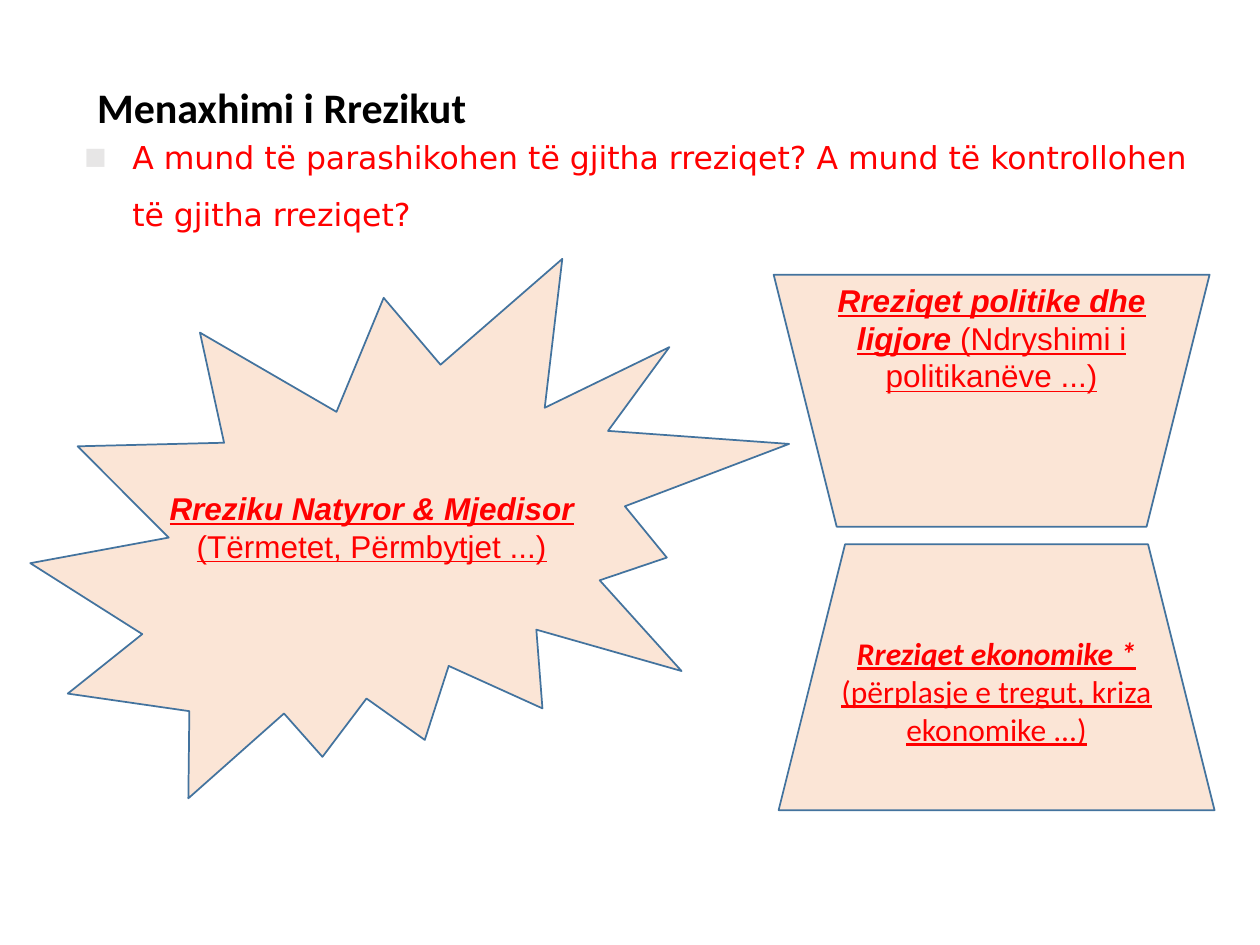
from dataclasses import dataclass

import pptx
import pptx.dml.color
import pptx.enum.shapes
import pptx.enum.text
import pptx.oxml
import pptx.oxml.ns
import pptx.util
from pptx.util import Inches

RED = pptx.dml.color.RGBColor(0xFF, 0x00, 0x00)
BLACK = pptx.dml.color.RGBColor(0x00, 0x00, 0x00)
PEACH = pptx.dml.color.RGBColor(0xFB, 0xE5, 0xD6)
BLUE = pptx.dml.color.RGBColor(0x43, 0x73, 0x9E)
SHAPES = pptx.enum.shapes.MSO_SHAPE
ANCHORS = pptx.enum.text.MSO_ANCHOR


@dataclass(frozen=True)
class Box:
    left: float
    top: float
    width: float
    height: float

    def lengths(self) -> tuple:
        return tuple(map(Inches, (self.left, self.top, self.width, self.height)))


@dataclass(frozen=True)
class Panel:
    preset: SHAPES
    box: Box
    rotation: float = 0


@dataclass(frozen=True)
class Risk:
    name: str
    examples: str
    font_name: str


def add_panel(slide, panel: Panel):
    shape = slide.shapes.add_shape(panel.preset, *panel.box.lengths())
    shape.rotation = panel.rotation
    shape.shadow.inherit = False
    shape.fill.solid()
    shape.fill.fore_color.rgb = PEACH
    shape.line.color.rgb = BLUE
    shape.line.width = pptx.util.Pt(1)
    return shape


def add_run(paragraph, text: str, font_name: str, size: int, color):
    run = paragraph.add_run()
    run.text = text
    run.font.name = font_name
    run.font.size = pptx.util.Pt(size)
    run.font.color.rgb = color
    return run


def write_risk(shape, risk: Risk) -> None:
    shape.text_frame.word_wrap = True
    paragraph = shape.text_frame.paragraphs[0]
    paragraph.alignment = pptx.enum.text.PP_ALIGN.CENTER
    for text, emphasis in ((risk.name + " ", True), (risk.examples, False)):
        run = add_run(paragraph, text, risk.font_name, 18, RED)
        run.font.bold = emphasis
        run.font.italic = emphasis
        run.font.underline = True


def add_risk_label(slide, box: Box, risk: Risk) -> None:
    write_risk(slide.shapes.add_textbox(*box.lengths()), risk)


def place(placeholder, box: Box):
    placeholder.left, placeholder.top, placeholder.width, placeholder.height = box.lengths()
    frame = placeholder.text_frame
    frame.word_wrap = True
    frame.auto_size = pptx.enum.text.MSO_AUTO_SIZE.NONE
    frame.vertical_anchor = ANCHORS.MIDDLE
    return frame.paragraphs[0]


def set_square_bullet(paragraph) -> None:
    properties = paragraph._p.get_or_add_pPr()
    properties.set("marL", str(Inches(0.38)))
    properties.set("indent", str(-Inches(0.38)))
    namespace = pptx.oxml.ns.nsdecls("a")
    for element in (
        f'<a:buClr {namespace}><a:srgbClr val="E7E6E6"/></a:buClr>',
        f'<a:buSzPct {namespace} val="75000"/>',
        f'<a:buFont {namespace} typeface="DejaVu Sans"/>',
        f'<a:buChar {namespace} char="■"/>',
    ):
        properties.append(pptx.oxml.parse_xml(element))


def main() -> None:
    presentation = pptx.Presentation()
    presentation.slide_width = Inches(10)
    presentation.slide_height = Inches(7.5)
    slide = presentation.slides.add_slide(presentation.slide_layouts[1])

    heading = place(slide.shapes.title, Box(0.67, 0.6, 5, 0.5))
    heading.alignment = pptx.enum.text.PP_ALIGN.LEFT
    add_run(heading, "Menaxhimi i Rrezikut", "Calibri", 24, BLACK).font.bold = True

    question = place(slide.placeholders[1], Box(0.57, 1.04, 9, 0.71))
    question.line_spacing = 1.5
    question.space_before = pptx.util.Pt(0)
    set_square_bullet(question)
    add_run(
        question,
        "A mund të parashikohen të gjitha rreziqet? A mund të kontrollohen të gjitha rreziqet?",
        "DejaVu Sans", 18, RED,
    )

    economic = add_panel(slide, Panel(SHAPES.TRAPEZOID, Box(6.18, 4.32, 3.46, 2.11)))
    economic.text_frame.vertical_anchor = ANCHORS.MIDDLE
    write_risk(economic, Risk(
        "Rreziqet ekonomike *", "(përplasje e tregut, kriza ekonomike ...)", "Calibri"))

    add_panel(slide, Panel(SHAPES.EXPLOSION2, Box(0.26, 1.99, 5.96, 4.44), 3.2))
    add_risk_label(slide, Box(1.22, 3.83, 3.46, 0.71), Risk(
        "Rreziku Natyror & Mjedisor", "(Tërmetet, Përmbytjet ...)", "Arial"))

    add_panel(slide, Panel(SHAPES.TRAPEZOID, Box(6.14, 2.18, 3.46, 2), 180))
    add_risk_label(slide, Box(6.14, 2.18, 3.46, 0.71), Risk(
        "Rreziqet politike dhe ligjore", "(Ndryshimi i politikanëve ...)", "Arial"))

    presentation.save("out.pptx")


if __name__ == "__main__":
    main()
